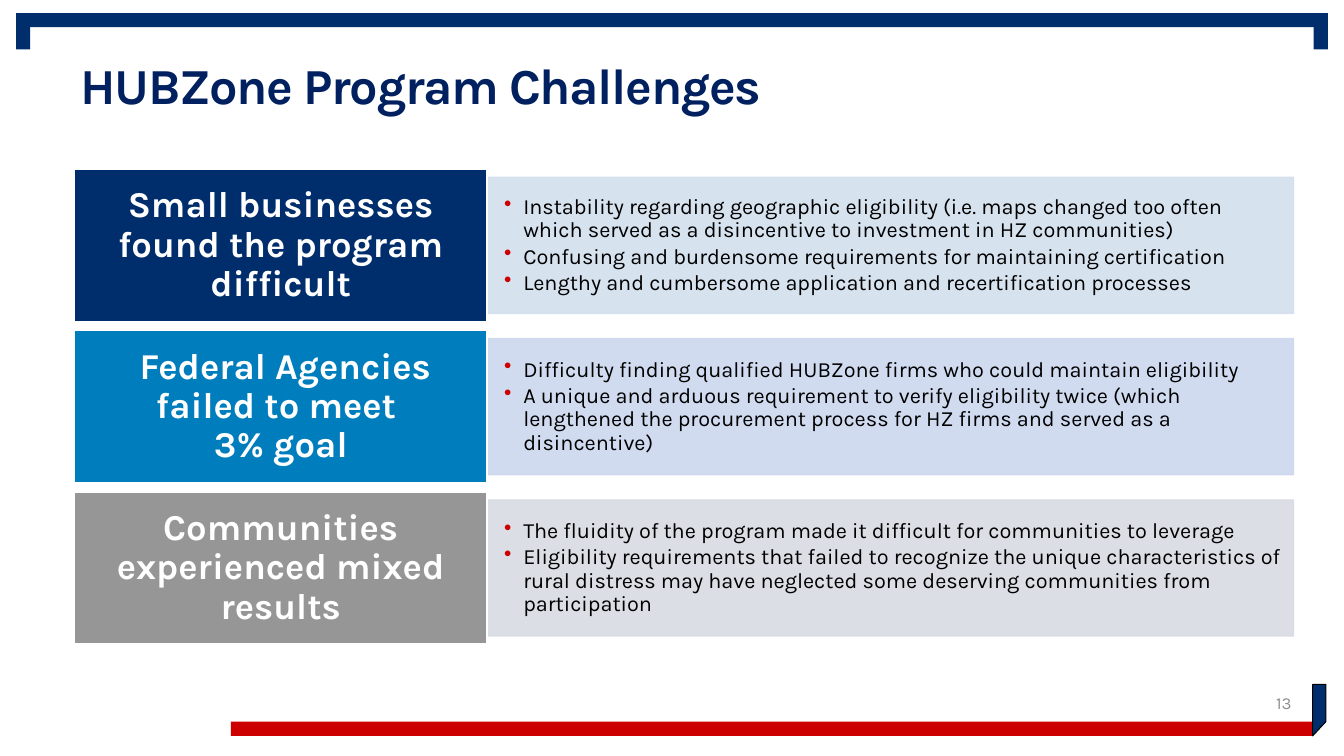
"""Build the HUBZone Program Challenges slide."""
from dataclasses import dataclass

from pptx import Presentation
from pptx.dml.color import RGBColor
from pptx.enum.shapes import MSO_SHAPE as Shp
from pptx.enum.text import MSO_ANCHOR as Anchor, PP_ALIGN as Align
from pptx.oxml.ns import qn
from pptx.util import Pt
from lxml.etree import SubElement

PX = 9144
FONT = "Karla"
NAVY = RGBColor(0x00, 0x2E, 0x6D)
TITLE_NAVY = RGBColor(0x00, 0x20, 0x60)
BLUE = RGBColor(0x00, 0x7D, 0xBC)
GRAY = RGBColor(0x96, 0x96, 0x96)
NUMBER_GRAY = RGBColor(0x8D, 0x8D, 0x8E)
RED = RGBColor(0xCC, 0x00, 0x00)
WHITE = RGBColor(0xFF, 0xFF, 0xFF)
BLACK = RGBColor(0x00, 0x00, 0x00)
PALE_BLUE = RGBColor(0xD3, 0xDF, 0xEE)
PALE_VIOLET = RGBColor(0xCD, 0xD8, 0xEF)
PALE_GRAY = RGBColor(0xD8, 0xDB, 0xE2)


@dataclass(frozen=True)
class Box:
    """A rectangle in px."""
    x: int
    y: int
    w: int
    h: int

    def emu(self) -> tuple[int, ...]:
        """Return the rectangle in EMU."""
        return tuple(v * PX for v in (self.x, self.y, self.w, self.h))


@dataclass(frozen=True)
class Bar:
    """A plain coloured bar of the slide frame."""
    box: Box
    color: RGBColor


@dataclass(frozen=True)
class Challenge:
    """A heading with its bulleted details."""
    heading: str
    color: RGBColor
    pale: RGBColor
    points: tuple[str, ...]


BARS = (
    Bar(Box(1303, 13, 14, 36), NAVY),
    Bar(Box(16, 13, 1301, 14), NAVY),
    Bar(Box(16, 13, 14, 36), NAVY),
    Bar(Box(229, 716, 1073, 14), RED),
)
CORNER = ((1302, 679), (1302, 730), (1315, 716), (1315, 679))
HEADING_TOP, BODY_TOP, PITCH = 168, 176, 160
CHALLENGES = (
    Challenge("Small businesses found the program difficult", NAVY, PALE_BLUE, (
        "Instability regarding geographic eligibility (i.e. maps changed too often "
        "which served as a disincentive to investment in HZ communities)",
        "Confusing and burdensome requirements for maintaining certification",
        "Lengthy and cumbersome application and recertification processes",
    )),
    Challenge(" Federal Agencies failed to meet \v3% goal", BLUE, PALE_VIOLET, (
        "Difficulty finding qualified HUBZone firms who could maintain eligibility",
        "A unique and arduous requirement to verify eligibility twice (which lengthened "
        "the procurement process for HZ firms and served as a disincentive)",
    )),
    Challenge("Communities experienced mixed results", GRAY, PALE_GRAY, (
        "The fluidity of the program made it difficult for communities to leverage",
        "Eligibility requirements that failed to recognize the unique characteristics of "
        "rural distress may have neglected some deserving communities from participation",
    )),
)


def set_attrs(obj, values: dict) -> None:
    """Set each attribute of obj from values."""
    for name, value in values.items():
        setattr(obj, name, value)


def set_font(p, size: float, color: RGBColor, bold: bool = False) -> None:
    """Format every run of a paragraph."""
    for r in p.runs:
        set_attrs(r.font, {"name": FONT, "size": Pt(size), "bold": bold})
        r.font.color.rgb = color


def set_frame(tf, mx: tuple[int, int], my: int) -> None:
    """Set wrapping, middle anchor and px margins."""
    set_attrs(tf, {
        "word_wrap": True, "vertical_anchor": Anchor.MIDDLE,
        "margin_left": mx[0] * PX, "margin_right": mx[1] * PX,
        "margin_top": my * PX, "margin_bottom": my * PX,
    })


def add_rect(shapes, box: Box, fill: RGBColor, line: RGBColor | None = None):
    """Add a flat rectangle, with a 1 pt line if a colour is given."""
    sp = shapes.add_shape(Shp.RECTANGLE, *box.emu())
    sp.shadow.inherit = False
    sp.fill.solid()
    sp.fill.fore_color.rgb = fill
    if line is None:
        sp.line.fill.background()
    else:
        sp.line.color.rgb = line
        sp.line.width = Pt(1)
    return sp


def add_corner(shapes) -> None:
    """Add the clipped corner tab at the lower right."""
    builder = shapes.build_freeform(*CORNER[0], scale=PX)
    builder.add_line_segments(CORNER[1:], close=True)
    sp = builder.convert_to_shape()
    sp.shadow.inherit = False
    sp.fill.solid()
    sp.fill.fore_color.rgb = NAVY
    sp.line.color.rgb = BLACK
    sp.line.width = 0


def add_bullet(p) -> None:
    """Give a paragraph a red hanging bullet."""
    ppr = p._p.get_or_add_pPr()
    ppr.set("marL", str(31 * PX))
    ppr.set("indent", str(-19 * PX))
    SubElement(SubElement(ppr, qn("a:buClr")), qn("a:srgbClr"), val=str(RED))
    SubElement(ppr, qn("a:buChar"), char="•")


def add_body(shapes, item: Challenge, top: int) -> None:
    """Add the pale panel with the bulleted details."""
    sp = add_rect(shapes, Box(482, top, 801, 135), item.pale, item.pale)
    for clr in sp._element.spPr.iter(qn("a:srgbClr")):
        SubElement(clr, qn("a:alpha"), val="90000")
    tf = sp.text_frame
    set_frame(tf, (6, 12), 9)
    for i, text in enumerate(item.points):
        p = tf.add_paragraph() if i else tf.paragraphs[0]
        p.text = text
        add_bullet(p)
        set_attrs(p, {"alignment": Align.LEFT, "line_spacing": 0.9, "space_after": Pt(2)})
        set_font(p, 15.5, BLACK)


def add_heading(shapes, item: Challenge, top: int) -> None:
    """Add the coloured heading block."""
    sp = add_rect(shapes, Box(74, top, 409, 151), item.color, WHITE)
    set_frame(sp.text_frame, (18, 18), 13)
    p = sp.text_frame.paragraphs[0]
    p.text = item.heading
    set_attrs(p, {"alignment": Align.CENTER, "line_spacing": 0.9})
    set_font(p, 26, WHITE, True)


def set_title(sp, text: str) -> None:
    """Place and format the title placeholder."""
    set_attrs(sp, dict(zip(("left", "top", "width", "height"), Box(70, 15, 1150, 145).emu())))
    set_frame(sp.text_frame, (10, 10), 5)
    p = sp.text_frame.paragraphs[0]
    p.text = text
    set_attrs(p, {"alignment": Align.LEFT, "line_spacing": 0.9})
    set_font(p, 36, TITLE_NAVY, True)
    p.runs[0].font._element.set("spc", "-100")


def add_number(shapes, text: str) -> None:
    """Add the slide number."""
    tf = shapes.add_textbox(*Box(991, 677, 300, 40).emu()).text_frame
    set_frame(tf, (10, 10), 5)
    p = tf.paragraphs[0]
    p.text = text
    p.alignment = Align.RIGHT
    set_font(p, 12, NUMBER_GRAY)


def main() -> None:
    """Build and save the slide."""
    prs = Presentation()
    set_attrs(prs, {"slide_width": 1333 * PX, "slide_height": 750 * PX})
    s = prs.slides.add_slide(prs.slide_layouts[5])
    for bar in BARS:
        add_rect(s.shapes, bar.box, bar.color)
    add_corner(s.shapes)
    set_title(s.shapes.title, "HUBZone Program Challenges")
    add_number(s.shapes, "13")
    for i, item in enumerate(CHALLENGES):
        add_body(s.shapes, item, BODY_TOP + i * PITCH)
        add_heading(s.shapes, item, HEADING_TOP + i * PITCH)
    prs.save("out.pptx")


if __name__ == "__main__":
    main()
